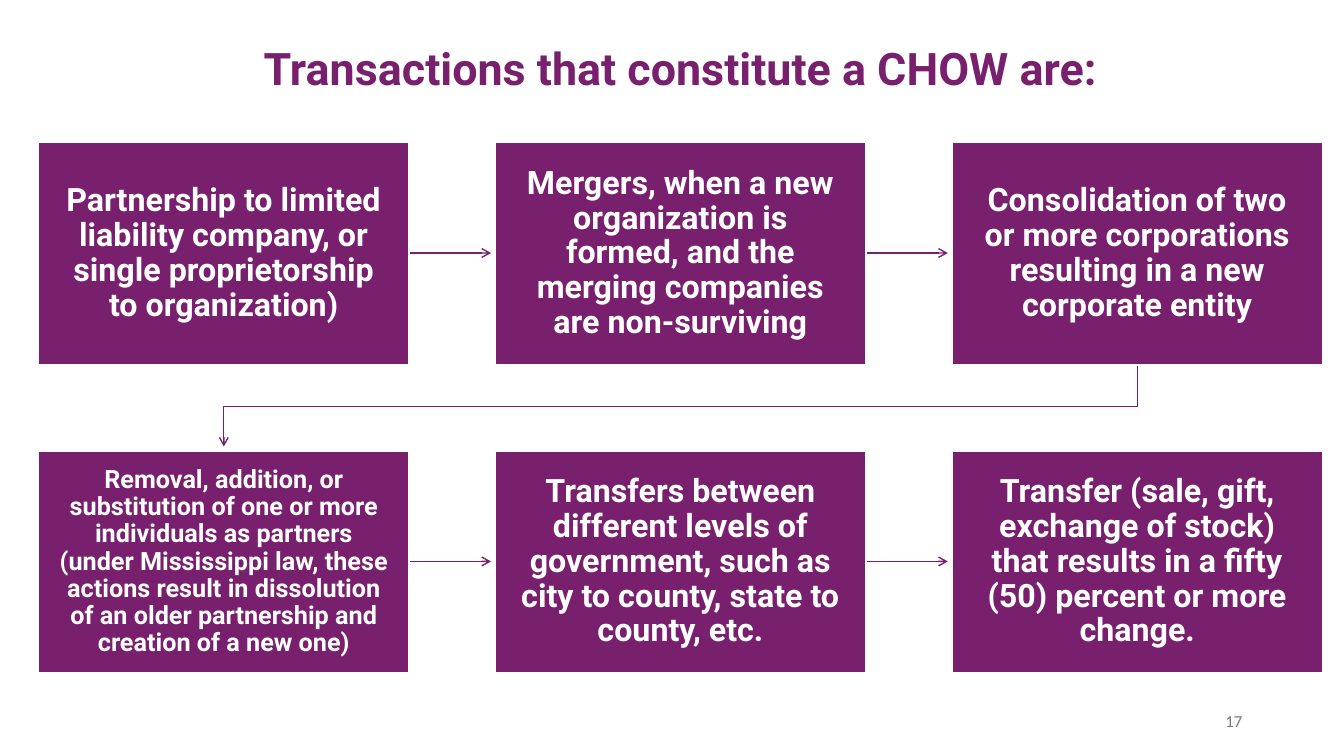
from dataclasses import dataclass

from lxml import etree
from pptx import Presentation
from pptx.dml.color import RGBColor
from pptx.enum.shapes import MSO_CONNECTOR, MSO_SHAPE
from pptx.enum.text import MSO_ANCHOR, PP_ALIGN
from pptx.oxml.ns import qn
from pptx.util import Pt

PX = 9144
RECT = MSO_SHAPE.RECTANGLE
STRAIGHT = MSO_CONNECTOR.STRAIGHT
MIDDLE = MSO_ANCHOR.MIDDLE
CENTER, RIGHT = PP_ALIGN.CENTER, PP_ALIGN.RIGHT


@dataclass(frozen=True)
class Theme:
    """Colours, fonts and type sizes of the slide."""
    plum: RGBColor = RGBColor(0x78, 0x20, 0x6E)
    white: RGBColor = RGBColor(0xFF, 0xFF, 0xFF)
    grey: RGBColor = RGBColor(0x79, 0x79, 0x79)
    main: str = "Roboto"
    plain: str = "Calibri"
    title: int = 32
    card: int = 23
    dense: int = 18
    number: int = 12


T = Theme()

STEPS = [
    ("Partnership to limited liability company, or single proprietorship "
     "to organization)", T.card),
    ("Mergers, when a new organization is formed, and the merging companies "
     "are non-surviving", T.card),
    ("Consolidation of two or more corporations resulting in a new "
     "corporate entity", T.card),
    ("Removal, addition, or substitution of one or more individuals as "
     "partners (under Mississippi law, these actions result in dissolution "
     "of an older partnership and creation of a new one)", T.dense),
    ("Transfers between different levels of government, such as city to "
     "county, state to county, etc.", T.card),
    ("Transfer (sale, gift, exchange of stock) that results in a fifty (50) "
     "percent or more change.", T.card),
]


def emu(*lengths):
    """Turn px lengths into EMU."""
    return [n * PX for n in lengths]


def set_all(obj, values):
    """Set each attribute named in values."""
    for name, value in values.items():
        setattr(obj, name, value)


def write(sp, text, size, color, font=T.main, bold=True, align=CENTER,
          spacing=0.9, pad=(10, 5)):
    """Write one formatted paragraph into a shape."""
    tf = sp.text_frame
    x, y = emu(*pad)
    set_all(tf, dict(word_wrap=True, vertical_anchor=MIDDLE, margin_left=x,
                     margin_right=x, margin_top=y, margin_bottom=y))
    p = tf.paragraphs[0]
    set_all(p, dict(alignment=align, line_spacing=spacing))
    r = p.add_run()
    r.text = text
    set_all(r.font, dict(name=font, size=Pt(size), bold=bold))
    r.font.color.rgb = color


def add_title(s, box, text):
    """Place the slide title in box."""
    write(s.shapes.add_textbox(*emu(*box)), text, T.title, T.plum,
          pad=(11, 11))


def add_number(s, box, text):
    """Place the slide number in box."""
    write(s.shapes.add_textbox(*emu(*box)), text, T.number, T.grey,
          font=T.plain, bold=False, align=RIGHT, spacing=1.0)


def add_card(s, box, text, size):
    """Place one filled step card in box."""
    sp = s.shapes.add_shape(RECT, *emu(*box))
    sp.shadow.inherit = False
    sp.fill.solid()
    sp.fill.fore_color.rgb = T.plum
    sp.line.color.rgb = T.white
    sp.line.width = Pt(1.5)
    write(sp, text, size, T.white, pad=(18, 19))


def add_arrow(s, points):
    """Draw an arrow through points, straight or bent."""
    if len(points) == 2:
        sp = s.shapes.add_connector(STRAIGHT, *emu(*points[0], *points[1]))
    else:
        fb = s.shapes.build_freeform(*points[0], scale=PX)
        fb.add_line_segments(points[1:], close=False)
        sp = fb.convert_to_shape()
        sp.fill.background()
    sp.line.color.rgb = T.plum
    sp.line.width = Pt(1)
    etree.SubElement(sp.line._get_or_add_ln(), qn("a:tailEnd"), type="arrow")
    etree.SubElement(sp._element.spPr, qn("a:effectLst"))


def add_flow(s, box, steps, cols=3, card=(368, 221), tip_gap=4):
    """Lay out the steps row by row in box and join them with arrows."""
    left, top, width, height = box
    w, h = card
    rows = len(steps) // cols
    dx, dy = (width - w) // (cols - 1), (height - h) // (rows - 1)
    for i, (text, size) in enumerate(steps):
        row, col = divmod(i, cols)
        x, y = left + col * dx, top + row * dy
        if col < cols - 1:
            mid = y + h // 2
            add_arrow(s, [(x + w, mid), (x + dx - tip_gap, mid)])
        elif row < rows - 1:
            start, end = x + w // 2, left + w // 2
            turn = y + (h + dy) // 2 - 1
            add_arrow(s, [(start, y + h), (start, turn), (end, turn),
                          (end, y + dy - tip_gap)])
        add_card(s, (x, y, w, h), text, size)


def main():
    """Build and save the slide."""
    prs = Presentation()
    prs.slide_width, prs.slide_height = emu(1333, 750)
    s = prs.slides.add_slide(prs.slide_layouts[6])
    add_number(s, (942, 695, 300, 40), "17")
    add_title(s, (244, 28, 862, 85), "Transactions that constitute a CHOW are:")
    add_flow(s, (38, 141, 1274, 527), STEPS)
    prs.save("out.pptx")


if __name__ == "__main__":
    main()
